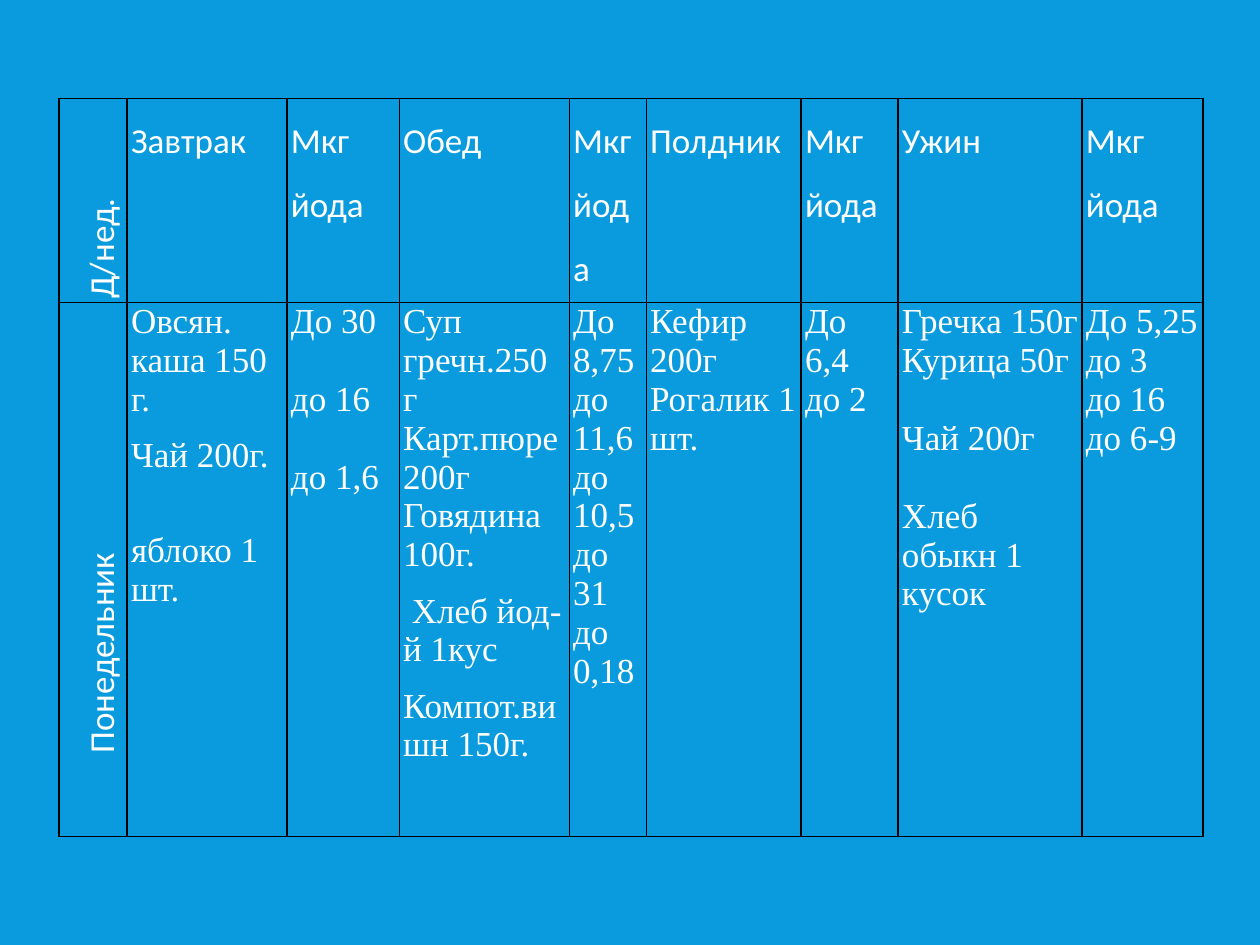
from dataclasses import dataclass

from pptx import Presentation, util as u
from pptx.dml.color import RGBColor
from pptx.oxml import ns, xmlchemy


@dataclass(frozen=True)
class Theme:
    background: RGBColor = RGBColor(0x09, 0x9B, 0xDD)
    ink: RGBColor = RGBColor(0xFF, 0xFF, 0xFF)
    border: str = "000000"
    border_width: int = u.Pt(1)
    heading_font: str = "Calibri"
    body_font: str = "Times New Roman"
    size: int = u.Pt(20)
    heading_spacing: float = 1.5
    paragraph_gap: float = 5
    blank_line: float = 22.3


@dataclass(frozen=True)
class Entry:
    """A menu line, set apart from the one above by whole line heights."""
    text: str
    skipped: int = 0


THEME = Theme()
COLUMNS = [0.54, 1.27, 0.89, 1.35, 0.61, 1.23, 0.77, 1.46, 0.96]
ROWS = [1.62, 4.24]
LEFT, TOP = 0.47, 0.78
DAY_INDENT = 0.63

IODINE = "Мкг йода"
HEADINGS = ["Д/нед.", "Завтрак", IODINE, "Обед", IODINE,
            "Полдник", IODINE, "Ужин", IODINE]
DAY = "Понедельник"
# Each column: whether its paragraphs are spaced, then its lines
MENU = [
    (True, [Entry("Овсян. каша 150 г."), Entry("Чай 200г."),
            Entry("яблоко 1 шт.", 1)]),
    (False, [Entry("До 30"), Entry("до 16", 1), Entry("до 1,6", 1)]),
    (True, [Entry("Суп гречн.250 г Карт.пюре 200г Говядина 100г."),
            Entry(" Хлеб йод-й 1кус"), Entry("Компот.вишн 150г.")]),
    (False, [Entry("До 8,75"), Entry("до 11,6"), Entry("до 10,5"),
             Entry("до 31"), Entry("до 0,18")]),
    (False, [Entry("Кефир 200г"), Entry("Рогалик 1 шт.")]),
    (False, [Entry("До 6,4"), Entry("до 2")]),
    (False, [Entry("Гречка 150г"), Entry("Курица 50г"),
             Entry("Чай 200г", 1), Entry("Хлеб обыкн 1 кусок", 1)]),
    (False, [Entry("До 5,25"), Entry("до 3"), Entry("до 16"), Entry("до 6-9")]),
]


def add_border(cell):
    properties = cell._tc.get_or_add_tcPr()
    for side in ("lnL", "lnR", "lnT", "lnB"):
        line = xmlchemy.OxmlElement(f"a:{side}")
        line.set("w", str(THEME.border_width))
        fill = xmlchemy.OxmlElement("a:solidFill")
        color = xmlchemy.OxmlElement("a:srgbClr")
        color.set("val", THEME.border)
        fill.append(color)
        line.append(fill)
        properties.append(line)


def format_cell(cell):
    cell.margin_left = cell.margin_right = u.Inches(0.03)
    cell.margin_top = cell.margin_bottom = 0
    add_border(cell)
    cell.fill.background()


def turn_upward(cell):
    cell._tc.get_or_add_tcPr().set("vert", "vert270")


def write(paragraph, words, font, spacing=1.0, before=0, after=0):
    paragraph.line_spacing = spacing
    paragraph.space_before, paragraph.space_after = u.Pt(before), u.Pt(after)
    run = paragraph.add_run()
    run.text = words
    run.font.name, run.font.size = font, THEME.size
    run.font.color.rgb = THEME.ink


def write_heading(cell, words, gap=0):
    write(cell.text_frame.paragraphs[0], words, THEME.heading_font,
          THEME.heading_spacing, gap, gap)


def write_menu(cell, spaced, entries):
    gap = THEME.paragraph_gap if spaced else 0
    frame = cell.text_frame
    for index, entry in enumerate(entries):
        paragraph = frame.add_paragraph() if index else frame.paragraphs[0]
        write(paragraph, entry.text, THEME.body_font,
              before=gap + entry.skipped * THEME.blank_line, after=gap)


def add_grid(slide):
    frame = slide.shapes.add_table(
        len(ROWS), len(COLUMNS), u.Inches(LEFT), u.Inches(TOP),
        u.Inches(sum(COLUMNS)), u.Inches(sum(ROWS)))
    grid = frame.table
    grid.first_row = grid.horz_banding = False
    for column, width in zip(grid.columns, COLUMNS):
        column.width = u.Inches(width)
    for row, height in zip(grid.rows, ROWS):
        row.height = u.Inches(height)
    for cell in grid.iter_cells():
        format_cell(cell)
    return grid


def main():
    deck = Presentation()
    deck.slide_width, deck.slide_height = u.Inches(10), u.Inches(7.5)
    slide = deck.slides.add_slide(deck.slide_layouts[6])
    slide.background.fill.solid()
    slide.background.fill.fore_color.rgb = THEME.background

    grid = add_grid(slide)

    # Headings
    for column, heading in enumerate(HEADINGS):
        write_heading(grid.cell(0, column), heading)

    # Day of the week, read upward
    day = grid.cell(1, 0)
    write_heading(day, DAY, THEME.paragraph_gap)
    indent = day.text_frame.paragraphs[0]._p.get_or_add_pPr()
    indent.set("marL", str(u.Inches(DAY_INDENT)))
    indent.set("indent", "0")
    for row in range(len(ROWS)):
        turn_upward(grid.cell(row, 0))

    # Meals and their iodine
    for column, (spaced, entries) in enumerate(MENU, start=1):
        write_menu(grid.cell(1, column), spaced, entries)

    deck.save("out.pptx")


if __name__ == "__main__":
    main()
